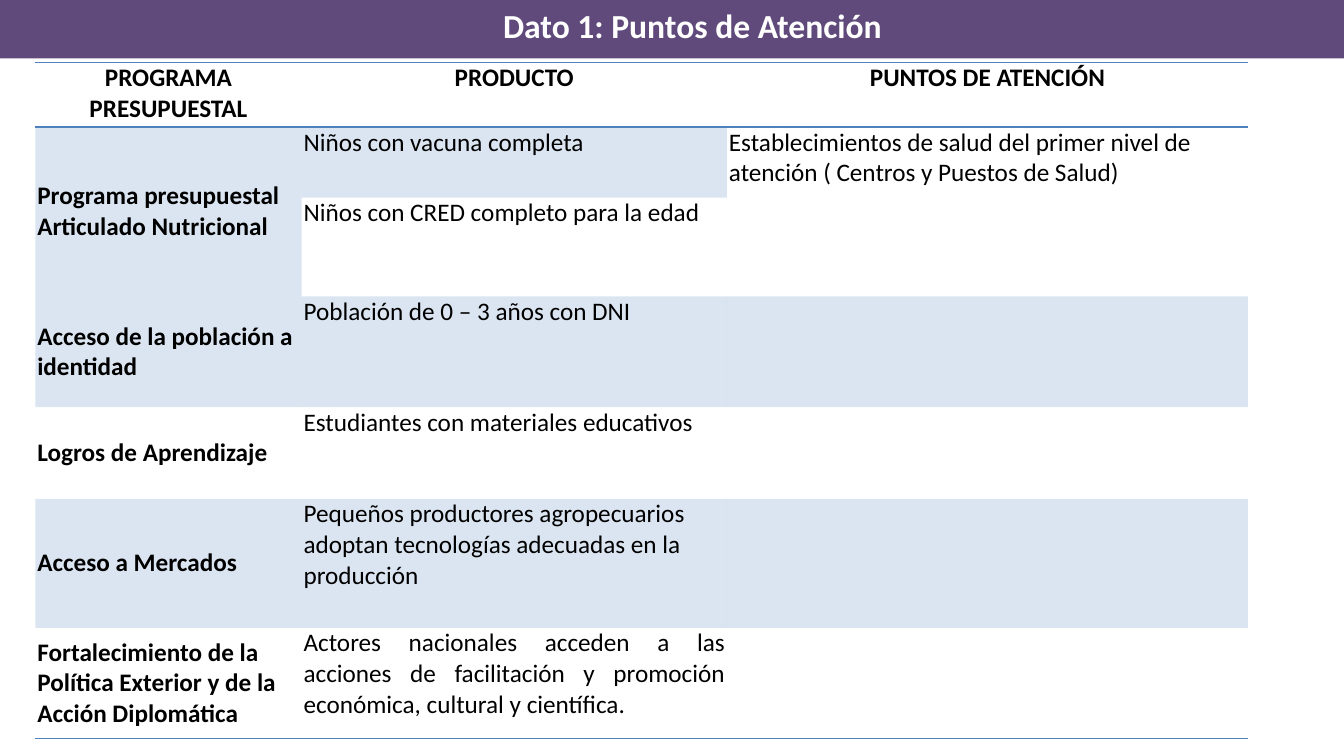
from lxml import etree
from pptx import Presentation
from pptx.dml.color import RGBColor
from pptx.enum.shapes import MSO_SHAPE
from pptx.enum.text import MSO_ANCHOR, PP_ALIGN
from pptx.oxml.ns import qn
from pptx.util import Cm, Pt

RECT = MSO_SHAPE.RECTANGLE
TOP, MIDDLE = MSO_ANCHOR.TOP, MSO_ANCHOR.MIDDLE
LEFT, CENTER, JUSTIFY = PP_ALIGN.LEFT, PP_ALIGN.CENTER, PP_ALIGN.JUSTIFY

COLORS = {"purple": "604A7B", "blue": "4F81BD", "white": "FFFFFF", "black": "000000"}
FONT = "Calibri"
NO_GRID = "{2D5ABB26-0587-4C30-8999-92F81FD0307C}"

COL_WIDTHS = [6.71, 10.72, 13.13]
ROW_HEIGHTS = [1.63, 1.78, 2.49, 2.79, 2.31, 3.25, 2.79]
ROWS = [
    ["PROGRAMA PRESUPUESTAL", "PRODUCTO", "PUNTOS DE ATENCIÓN"],
    ["Programa presupuestal Articulado Nutricional", "Niños con vacuna completa",
     "Establecimientos de salud del primer nivel de atención ( Centros y Puestos de Salud)"],
    ["", "Niños con CRED completo para la edad", ""],
    ["Acceso de la población a identidad", "Población de 0 – 3 años con DNI", ""],
    ["Logros de Aprendizaje", "Estudiantes con materiales educativos", ""],
    ["Acceso a Mercados",
     "Pequeños productores agropecuarios adoptan tecnologías adecuadas en la producción", ""],
    ["Fortalecimiento de la Política Exterior y de la Acción Diplomática",
     "Actores nacionales acceden a las acciones de facilitación y promoción económica, "
     "cultural y científica.", ""],
]
LAST = len(ROWS) - 1


def rgb(name):
    return RGBColor.from_string(COLORS[name])


class SlideBuilder:
    def __init__(self, slide):
        self.slide = slide

    def style(self, p, size, color, bold, align):
        p.alignment = align
        for r in p.runs:
            r.font.name, r.font.size, r.font.bold = FONT, Pt(size), bold
            r.font.color.rgb = rgb(color)

    def bar(self, x, y, w, h, color):
        sp = self.slide.shapes.add_shape(RECT, Cm(x), Cm(y), Cm(w), Cm(h))
        sp.shadow.inherit = False
        sp.fill.solid()
        sp.fill.fore_color.rgb = rgb(color)
        sp.line.fill.background()

    def text(self, x, y, w, h, text, size, color):
        tf = self.slide.shapes.add_textbox(Cm(x), Cm(y), Cm(w), Cm(h)).text_frame
        tf.word_wrap = True
        tf.text = text
        self.style(tf.paragraphs[0], size, color, True, CENTER)

    def table(self, x, y, widths, heights):
        frame = self.slide.shapes.add_table(len(heights), len(widths), Cm(x), Cm(y),
                                            Cm(sum(widths)), Cm(sum(heights)))
        table = frame.table
        table.first_row = table.horz_banding = False
        table._tbl.tblPr.find(qn("a:tableStyleId")).text = NO_GRID
        for col, w in zip(table.columns, widths):
            col.width = Cm(w)
        for row, h in zip(table.rows, heights):
            row.height = Cm(h)
        return table

    def cell(self, cell, text, bold, align, anchor, sides, color=None):
        cell.margin_left = cell.margin_right = Cm(0.05)
        cell.margin_top = cell.margin_bottom = 0
        cell.vertical_anchor = anchor
        cell.text = text
        self.style(cell.text_frame.paragraphs[0], 18, "black", bold, align)
        for side in sides:
            self.border(cell, side)
        if color:
            cell.fill.solid()
            cell.fill.fore_color.rgb = rgb(color)
            clr = cell._tc.tcPr.find(".//" + qn("a:srgbClr"))
            etree.SubElement(clr, qn("a:alpha"), val="20000")
        else:
            cell.fill.background()

    def border(self, cell, side):
        tc_pr = cell._tc.get_or_add_tcPr()
        ln = etree.SubElement(tc_pr, qn("a:ln" + side), w=str(Pt(1)))
        fill = etree.SubElement(ln, qn("a:solidFill"))
        etree.SubElement(fill, qn("a:srgbClr"), val=COLORS["blue"])


def main():
    prs = Presentation()
    prs.slide_width, prs.slide_height = Cm(33.87), Cm(19.05)
    s = SlideBuilder(prs.slides.add_slide(prs.slide_layouts[6]))

    # Programme table: odd rows are shaded
    table = s.table(0.89, 1.57, COL_WIDTHS, ROW_HEIGHTS)
    for i, row in enumerate(ROWS):
        sides = "TB" if i == 0 else "B" if i == LAST else ""
        for j, text in enumerate(row):
            align = CENTER if i == 0 else JUSTIFY if (i, j) == (LAST, 1) else LEFT
            anchor = MIDDLE if i and j == 0 else TOP
            color = "blue" if i % 2 else None
            if (i, j) == (1, 2):
                color = "white"
            s.cell(table.cell(i, j), text, i == 0 or j == 0, align, anchor, sides, color)
    for j in (0, 2):
        table.cell(1, j).merge(table.cell(2, j))

    # Title bar
    s.bar(0, 0, 33.87, 1.47, "purple")
    s.text(4.75, 0, 25.4, 1.27, "Dato 1: Puntos de Atención", 24, "white")

    prs.save("out.pptx")


if __name__ == "__main__":
    main()
